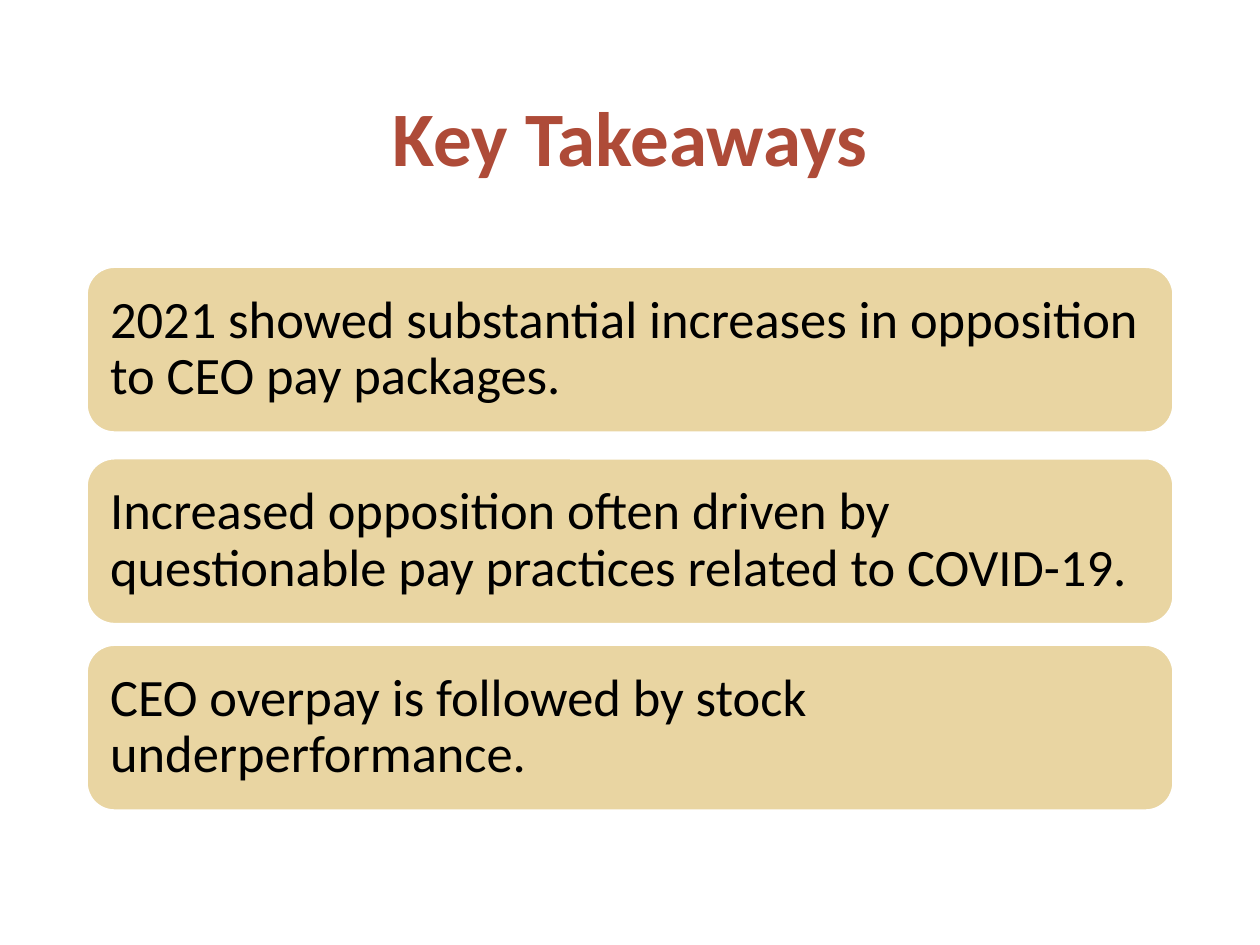
from dataclasses import dataclass

from pptx import Presentation
from pptx.dml.color import RGBColor
from pptx.enum import shapes, text
from pptx.util import Inches, Pt


@dataclass(frozen=True)
class Theme:
    font: str = "Calibri"
    rust: RGBColor = RGBColor(0xAE, 0x4B, 0x38)
    sand: RGBColor = RGBColor(0xE9, 0xD5, 0xA2)
    white: RGBColor = RGBColor(255, 255, 255)
    black: RGBColor = RGBColor(0, 0, 0)
    head: Pt = Pt(44)
    body: Pt = Pt(30)


THEME = Theme()
LEFT, WIDTH = Inches(0.69), Inches(8.62)

# Top of each card in inches, with its message
CARDS = [
    (2.12, "2021 showed substantial increases in opposition to CEO pay packages."),
    (3.64, "Increased opposition often driven by questionable pay practices "
           "related to COVID-19."),
    (5.12, "CEO overpay is followed by stock underperformance."),
]


def apply(item, values):
    for name, value in values.items():
        setattr(item, name, value)


def write(frame, words, size, color, align, bold=False):
    apply(frame, {"word_wrap": True, "auto_size": text.MSO_AUTO_SIZE.NONE,
                  "vertical_anchor": text.MSO_ANCHOR.MIDDLE})
    para = frame.paragraphs[0]
    apply(para, {"text": words, "alignment": align, "line_spacing": 0.9})
    font = para.runs[0].font
    apply(font, {"name": THEME.font, "size": size, "bold": bold})
    font.color.rgb = color


def add_title(slide, words):
    title = slide.shapes.title
    apply(title, {"left": LEFT, "top": Inches(0.4),
                  "width": WIDTH, "height": Inches(1.45)})
    write(title.text_frame, words, THEME.head, THEME.rust,
          text.PP_ALIGN.CENTER, bold=True)


def add_card(slide, top, words):
    card = slide.shapes.add_shape(shapes.MSO_SHAPE.ROUNDED_RECTANGLE,
                                  LEFT, Inches(top), WIDTH, Inches(1.31))
    card.shadow.inherit = False
    card.fill.solid()
    card.fill.fore_color.rgb = THEME.sand
    card.line.color.rgb = THEME.white
    card.line.width = Pt(1)
    frame = card.text_frame
    sides = ("left", "top", "right", "bottom")
    apply(frame, {f"margin_{side}": Inches(0.12) for side in sides})
    write(frame, words, THEME.body, THEME.black, text.PP_ALIGN.LEFT)


def main():
    deck = Presentation()
    apply(deck, {"slide_width": Inches(10), "slide_height": Inches(7.5)})
    slide = deck.slides.add_slide(deck.slide_layouts[5])

    # Heading
    add_title(slide, "Key Takeaways")

    # Stacked message cards
    for top, words in CARDS:
        add_card(slide, top, words)

    deck.save("out.pptx")


if __name__ == "__main__":
    main()
